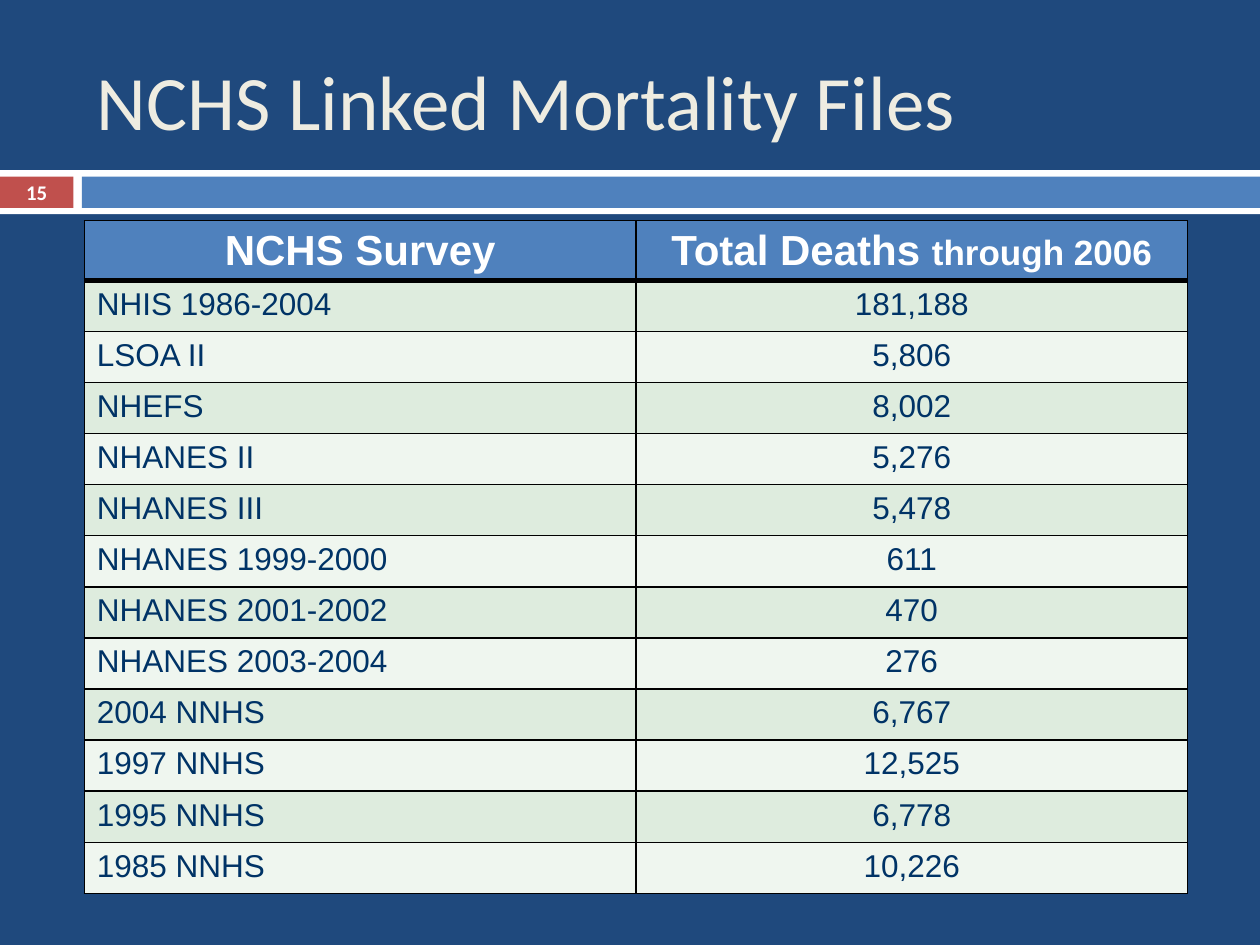
"""Build the slide with the table of NCHS linked mortality files."""
from lxml import etree
from pptx import Presentation
from pptx.dml.color import RGBColor
from pptx.enum import shapes, text
from pptx.oxml import ns
from pptx.util import Cm, Pt


def paint(fill, colour):
    """Give a shape, cell, background or font a solid colour."""
    fill.solid()
    fill.fore_color.rgb = RGBColor.from_string(colour)


def write(paragraph, words, size, colour, font="Arial", bold=False, align=text.PP_ALIGN.LEFT):
    """Append a formatted run to a paragraph."""
    paragraph.alignment = align
    run = paragraph.add_run()
    run.text = words
    run.font.size = Pt(size)
    run.font.name = font
    run.font.bold = bold
    paint(run.font.fill, colour)


CENTER = text.PP_ALIGN.CENTER
surveys = [
    ("NHIS 1986-2004", "181,188"),
    ("LSOA II", "5,806"),
    ("NHEFS", "8,002"),
    ("NHANES II", "5,276"),
    ("NHANES III", "5,478"),
    ("NHANES 1999-2000", "611"),
    ("NHANES 2001-2002", "470"),
    ("NHANES 2003-2004", "276"),
    ("2004 NNHS", "6,767"),
    ("1997 NNHS", "12,525"),
    ("1995 NNHS", "6,778"),
    ("1985 NNHS", "10,226"),
]

presentation = Presentation()
presentation.slide_width, presentation.slide_height = Cm(25.4), Cm(19.05)
slide = presentation.slides.add_slide(presentation.slide_layouts[5])
paint(slide.background.fill, "1F497D")

bands = [
    (0, 3.43, 25.4, 0.89, "FFFFFF"),
    (0, 3.56, 1.48, 0.63, "C0504D"),
    (1.65, 3.56, 23.75, 0.63, "4F81BD"),
]
for left, top, width, height, colour in bands:
    band = slide.shapes.add_shape(
        shapes.MSO_SHAPE.RECTANGLE, Cm(left), Cm(top), Cm(width), Cm(height))
    band.shadow.inherit = False
    paint(band.fill, colour)
    band.line.fill.background()

title = slide.shapes.title
title.left, title.top, title.width, title.height = Cm(1.7), Cm(0.64), Cm(22.66), Cm(2.74)
title.text_frame.vertical_anchor = text.MSO_ANCHOR.MIDDLE
write(title.text_frame.paragraphs[0], "NCHS Linked Mortality Files", 44, "EEECE1", font="Calibri")

table = slide.shapes.add_table(
    len(surveys) + 1, 2, Cm(1.7), Cm(4.45), Cm(22.24), Cm(13.55)).table
for column in table.columns:
    column.width = Cm(11.12)
for row in table.rows:
    row.height = Cm(1.03)
table.rows[0].height = Cm(1.19)

survey_header, deaths_header = (cell.text_frame.paragraphs[0] for cell in table.rows[0].cells)
write(survey_header, "NCHS Survey", 24, "FFFFFF", bold=True, align=CENTER)
write(deaths_header, "Total Deaths ", 24, "FFFFFF", bold=True, align=CENTER)
write(deaths_header, "through 2006", 20, "FFFFFF", bold=True, align=CENTER)
for index, (survey, deaths) in enumerate(surveys, start=1):
    write(table.cell(index, 0).text_frame.paragraphs[0], survey, 18, "003366")
    write(table.cell(index, 1).text_frame.paragraphs[0], deaths, 18, "003366", align=CENTER)

for index, row in enumerate(table.rows):
    row_colour = "4F81BD" if index == 0 else ("EFF6EF", "DEECDE")[index % 2]
    for cell in row.cells:
        properties = cell._tc.get_or_add_tcPr()
        for side in ("lnL", "lnR", "lnT", "lnB"):
            thick = (index, side) in ((0, "lnB"), (1, "lnT"))
            border = etree.SubElement(properties, ns.qn(f"a:{side}"), w=str(Pt(3 if thick else 1)))
            border_fill = etree.SubElement(border, ns.qn("a:solidFill"))
            etree.SubElement(border_fill, ns.qn("a:srgbClr"), val="000000")
        paint(cell.fill, row_colour)

number_box = slide.shapes.add_textbox(Cm(0), Cm(3.53), Cm(1.48), Cm(0.69))
number_frame = number_box.text_frame
number_frame.word_wrap = True
number_frame.margin_top = number_frame.margin_bottom = Cm(0)
number_frame.vertical_anchor = text.MSO_ANCHOR.MIDDLE
write(number_frame.paragraphs[0], "15", 11.9, "FFFFFF", font="Calibri", bold=True, align=CENTER)

presentation.save("out.pptx")
